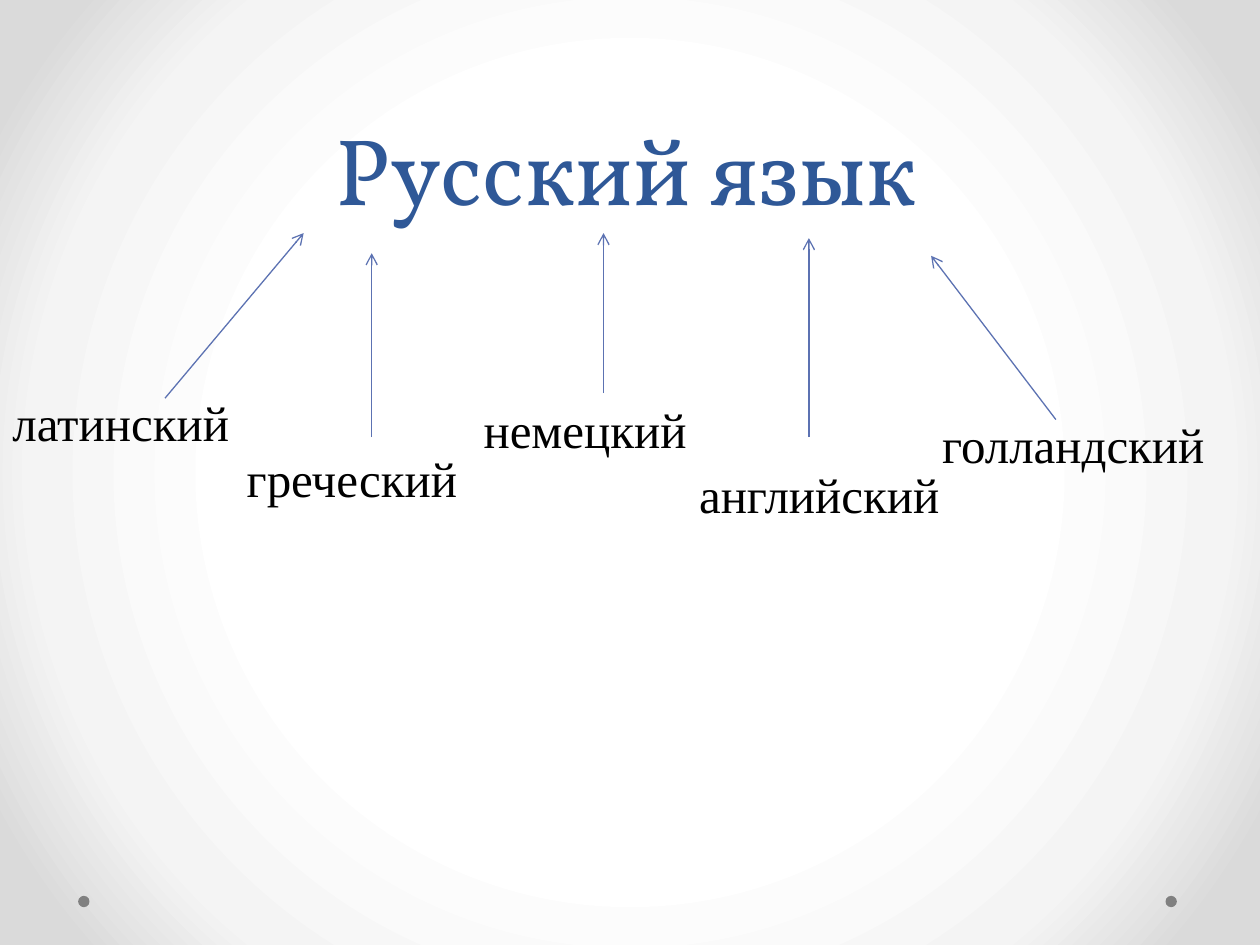
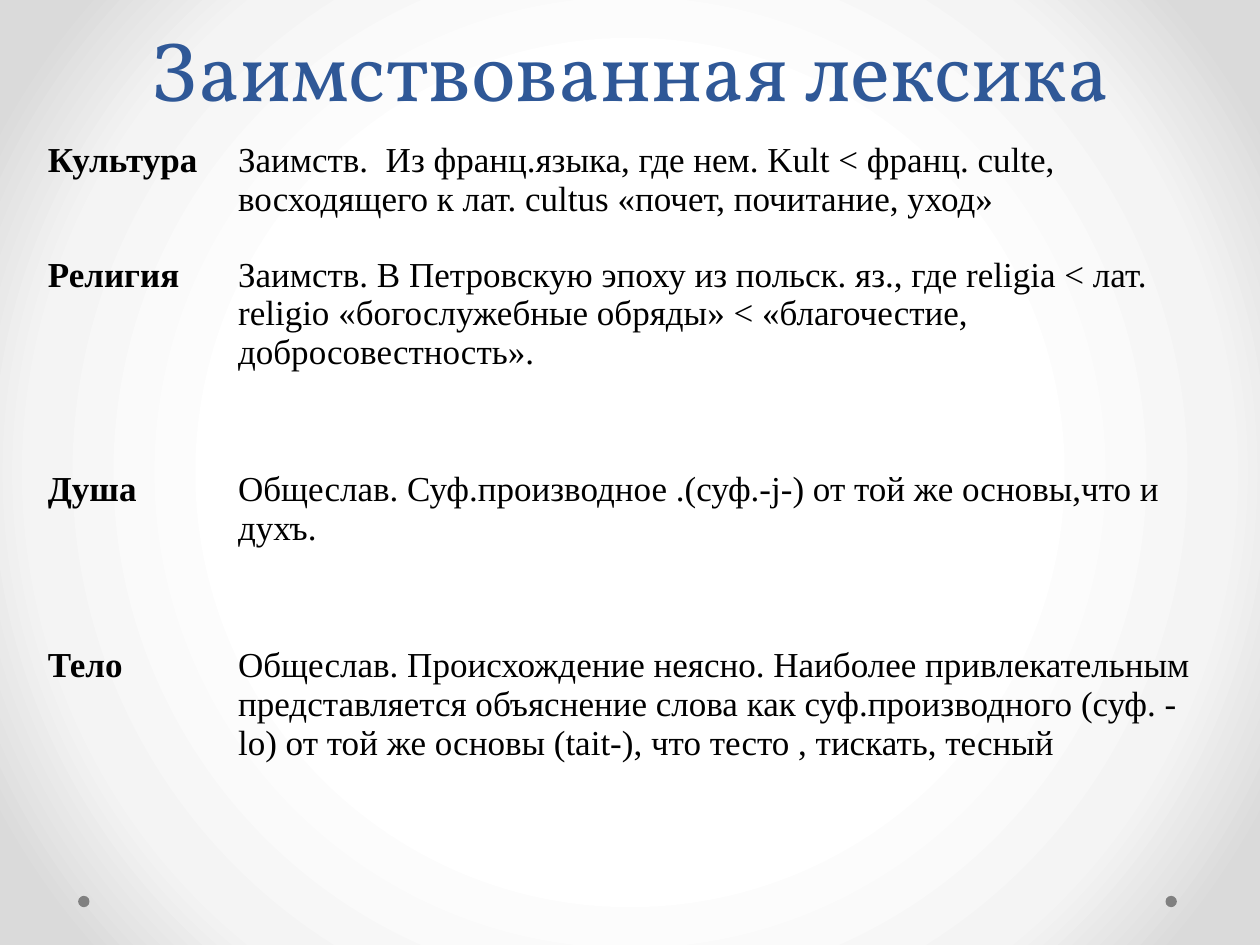
from pptx import Presentation
from pptx.dml.color import RGBColor
from pptx.enum.shapes import MSO_CONNECTOR as CONN, MSO_SHAPE as SHP
from pptx.enum.text import MSO_ANCHOR as ANC, MSO_AUTO_SIZE as FIT, PP_ALIGN as AL
from pptx.oxml import parse_xml
from pptx.oxml.ns import nsdecls, qn
from pptx.util import Inches, Pt

BLUE, ARROW, DOT, BLACK = "2F5897", "5C72B2", "808080", "000000"
TITLE_FONT, BODY_FONT = "Vollkorn", "Times New Roman"
GLOW = [(50, "FFFFFF"), (76, "F4F4F4"), (92, "DADADA")]
NO_STYLE = "{2D5ABB26-0587-4C30-8999-92F81FD0307C}"

# word, label box (left, top, width), arrow start, arrow end
LANGUAGES = [
    ("латинский", (0, 3.07, 1.92), (1.31, 3.16), (2.41, 1.85)),
    ("греческий", (1.86, 3.51, 1.98), (2.95, 3.47), (2.95, 2.01)),
    ("немецкий", (3.74, 3.12, 1.84), (4.79, 3.12), (4.79, 1.85)),
    ("английский", (5.45, 3.64, 2.19), (6.42, 3.47), (6.42, 1.89)),
    ("голландский", (7.38, 3.24, 2.44), (8.38, 3.33), (7.39, 2.03)),
]

# word, etymology, row height
WORDS = [
    ("Культура", "Заимств.  Из франц.языка, где нем. Kult < франц. culte, "
     "восходящего к лат. cultus «почет, почитание, уход»", 0.91),
    ("Религия", "Заимств. В Петровскую эпоху из польск. яз., где religia < лат. "
     "religio «богослужебные обряды» < «благочестие, добросовестность».", 1.7),
    ("Душа", "Общеслав. Суф.производное .(суф.-j-) от той же основы,что и духъ.", 1.4),
    ("Тело", "Общеслав. Происхождение неясно. Наиболее привлекательным "
     "представляется объяснение слова как суф.производного (суф. - lo) "
     "от той же основы (tait-), что тесто , тискать, тесный", 2.21),
]


def rgb(value):
    return RGBColor.from_string(value)


def inches(*values):
    return [Inches(v) for v in values]


def write(tf, text, size, font=BODY_FONT, color=BLACK, bold=False, align=AL.LEFT,
          spacing=None):
    p = tf.paragraphs[0]
    p.alignment = align
    if spacing:
        p.line_spacing = Pt(spacing)
    r = p.add_run()
    r.text = text
    r.font.size, r.font.name, r.font.bold = Pt(size), font, bold
    r.font.color.rgb = rgb(color)


def style_master(prs, s):
    """Give the master its radial background and two dots, built on s and moved."""
    master = prs.slide_master
    master.background.fill.gradient()
    stops = "".join(f'<a:gs pos="{pos * 1000}"><a:srgbClr val="{c}"/></a:gs>'
                    for pos, c in GLOW)
    grad = master.element.find(".//" + qn("a:gradFill"))
    grad.getparent().replace(grad, parse_xml(
        f'<a:gradFill {nsdecls("a")} rotWithShape="1"><a:gsLst>{stops}</a:gsLst>'
        '<a:path path="circle"><a:fillToRect l="50000" t="50000" r="50000" b="50000"/>'
        '</a:path></a:gradFill>'))
    tree = master.element.find(".//" + qn("p:spTree"))
    for left in (9.25, 0.62):
        dot = s.shapes.add_shape(SHP.OVAL, *inches(left, 7.11, 0.09, 0.09))
        dot.shadow.inherit = False
        dot.fill.solid()
        dot.fill.fore_color.rgb = rgb(DOT)
        dot.line.fill.background()
        tree.append(dot.element)


def set_title(s, text, size, box):
    title = s.shapes.title
    title.left, title.top, title.width, title.height = inches(*box)
    tf = title.text_frame
    tf.word_wrap, tf.auto_size, tf.vertical_anchor = True, FIT.NONE, ANC.BOTTOM
    write(tf, text, size, font=TITLE_FONT, color=BLUE, align=AL.CENTER, spacing=58)


def add_arrow(s, start, end):
    line = s.shapes.add_connector(CONN.STRAIGHT, *inches(*start, *end))
    line.line.color.rgb = rgb(ARROW)
    line.line.width = Pt(0.75)
    line.line._get_or_add_ln().append(
        parse_xml(f'<a:tailEnd {nsdecls("a")} type="arrow"/>'))
    line.element.spPr.append(parse_xml(f'<a:effectLst {nsdecls("a")}/>'))


def add_languages(s, left, top):
    for word, (x, y, width), start, end in LANGUAGES:
        add_arrow(s, *[(left + px, top + py) for px, py in (start, end)])
        label = s.shapes.add_textbox(*inches(left + x, top + y, width, 0.57))
        tf = label.text_frame
        tf.word_wrap, tf.auto_size = False, FIT.SHAPE_TO_FIT_TEXT
        write(tf, word, 28)


def add_etymologies(s, left, top, widths):
    heights = [height for _, _, height in WORDS]
    frame = s.shapes.add_table(len(WORDS), len(widths),
                               *inches(left, top, sum(widths), sum(heights)))
    table = frame.table
    table.first_row = table.horz_banding = False
    frame.element.find(".//" + qn("a:tableStyleId")).text = NO_STYLE
    for col, width in zip(table.columns, widths):
        col.width = Inches(width)
    for row, (word, origin, height) in zip(table.rows, WORDS):
        row.height = Inches(height)
        for i, (cell, text) in enumerate(zip(row.cells, (word, origin))):
            cell.fill.background()
            write(cell.text_frame, text, 20, bold=i == 0)


def main():
    prs = Presentation()
    prs.slide_width, prs.slide_height = inches(10, 7.5)
    title_only = prs.slide_layouts[5]

    s = prs.slides.add_slide(title_only)
    style_master(prs, s)
    set_title(s, "Русский язык", 54, (1.54, 0.6, 6.86, 1.23))
    add_languages(s, 0, 0)

    s = prs.slides.add_slide(title_only)
    set_title(s, "Заимствованная лексика", 48, (0.5, 0, 9, 0.99))
    add_etymologies(s, 0.28, 1.07, (1.51, 8.02))

    prs.save("out.pptx")


if __name__ == "__main__":
    main()
